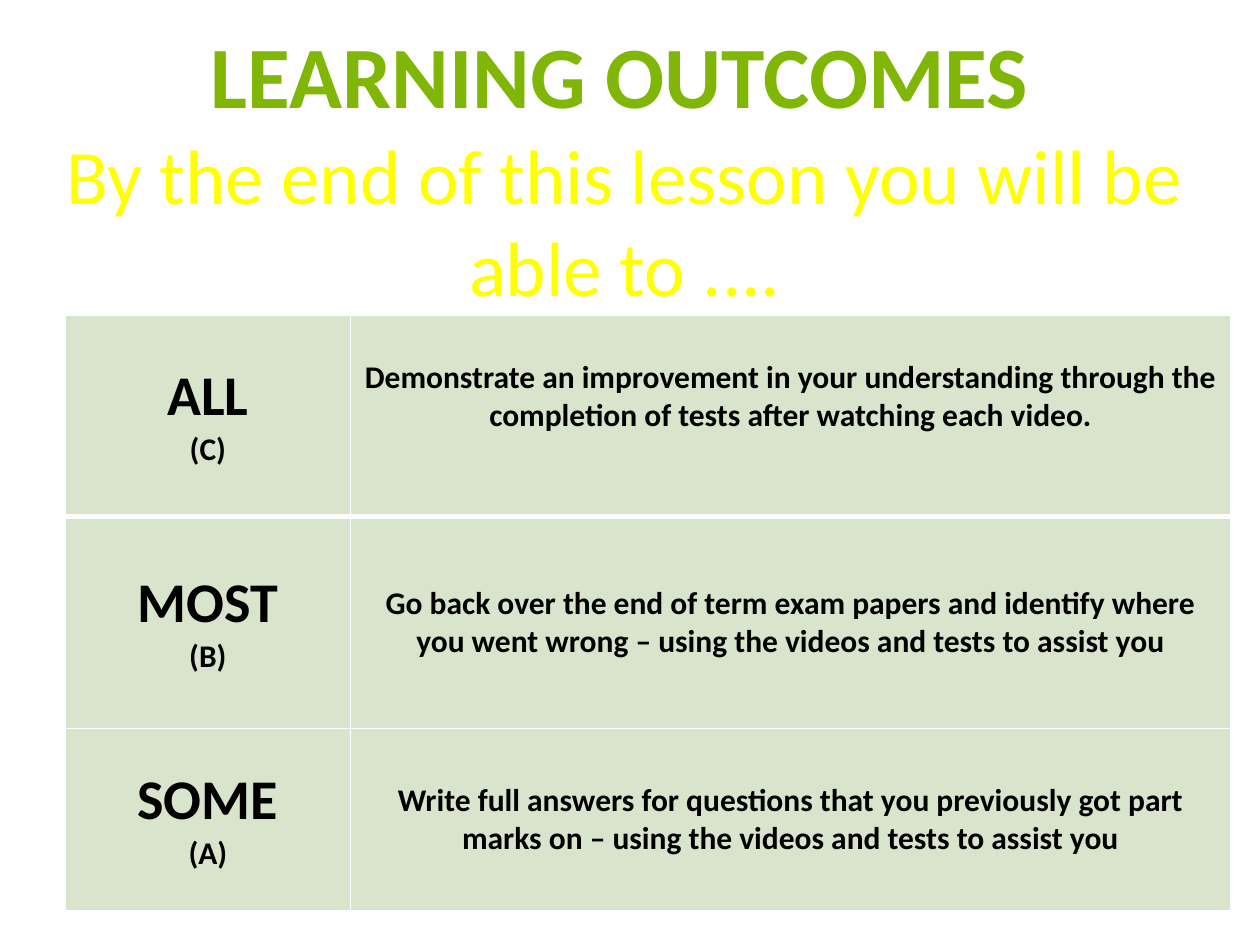
import dataclasses

import pptx
import pptx.dml.color
import pptx.enum.text
import pptx.oxml
import pptx.oxml.ns
import pptx.util

Inches = pptx.util.Inches
Pt = pptx.util.Pt

COLOURS = {
    "heading": "80B606",
    "intro": "FFFF00",
    "text": "000000",
    "cell": "D8E5CC",
    "border": "FFFFFF",
}
FONT = "Calibri"
COLUMN_WIDTHS = (2.26, 6.99)


@dataclasses.dataclass
class Outcome:
    group: str
    grade: str
    task: str
    height: float
    bottom_border: float = 1
    bottom_margin: float = 0.05


OUTCOMES = [
    Outcome("ALL", "(C)", "Demonstrate an improvement in your understanding through "
            "the completion of tests after watching each video.", 1.6, 3, 0.35),
    Outcome("MOST", "(B)", "Go back over the end of term exam papers and identify where "
            "you went wrong – using the videos and tests to assist you", 1.68),
    Outcome("SOME", "(A)", "Write full answers for questions that you previously got part "
            "marks on – using the videos and tests to assist you", 1.45),
]


def rgb(name: str) -> pptx.dml.color.RGBColor:
    return pptx.dml.color.RGBColor.from_string(COLOURS[name])


def write_line(paragraph, text: str, size: float, colour: str, bold: bool) -> None:
    paragraph.alignment = pptx.enum.text.PP_ALIGN.CENTER
    paragraph.space_before = Pt(0)
    run = paragraph.add_run()
    run.text = text
    for attribute, value in {"name": FONT, "size": Pt(size), "bold": bold}.items():
        setattr(run.font, attribute, value)
    run.font.color.rgb = rgb(colour)


def fill_placeholder(placeholder, box: tuple, text: str, size: float,
                     colour: str, bold: bool) -> None:
    for side, length in zip(("left", "top", "width", "height"), box):
        setattr(placeholder, side, Inches(length))
    frame = placeholder.text_frame
    frame_format = {
        "word_wrap": True,
        "auto_size": pptx.enum.text.MSO_AUTO_SIZE.NONE,
        "vertical_anchor": pptx.enum.text.MSO_ANCHOR.TOP,
    }
    for attribute, value in frame_format.items():
        setattr(frame, attribute, value)
    write_line(frame.paragraphs[0], text, size, colour, bold)


def add_border(cell, side: str, width: float) -> None:
    """Append one cell edge; edges must come before the cell's fill."""
    edge = pptx.oxml.parse_xml(
        f'<a:{side} {pptx.oxml.ns.nsdecls("a")} w="{Pt(width)}"><a:solidFill>'
        f'<a:srgbClr val="{COLOURS["border"]}"/></a:solidFill></a:{side}>')
    cell._tc.get_or_add_tcPr().append(edge)


def fill_cell(cell, lines: list[tuple[str, float]], top_border: float,
              bottom_border: float) -> None:
    for side, width in {"lnL": 1, "lnR": 1, "lnT": top_border, "lnB": bottom_border}.items():
        add_border(cell, side, width)
    cell.fill.solid()
    cell.fill.fore_color.rgb = rgb("cell")
    cell.vertical_anchor = pptx.enum.text.MSO_ANCHOR.MIDDLE
    frame = cell.text_frame
    for index, (text, size) in enumerate(lines):
        paragraph = frame.add_paragraph() if index else frame.paragraphs[0]
        write_line(paragraph, text, size, "text", True)


def add_outcomes(slide, left: float, top: float) -> None:
    table = slide.shapes.add_table(
        len(OUTCOMES), len(COLUMN_WIDTHS), Inches(left), Inches(top),
        Inches(sum(COLUMN_WIDTHS)),
        Inches(sum(outcome.height for outcome in OUTCOMES))).table
    table.first_row = table.horz_banding = False
    for column, width in zip(table.columns, COLUMN_WIDTHS):
        column.width = Inches(width)
    top_border = 1
    for index, outcome in enumerate(OUTCOMES):
        table.rows[index].height = Inches(outcome.height)
        group_cell, task_cell = table.rows[index].cells
        borders = (top_border, outcome.bottom_border)
        fill_cell(group_cell, [(outcome.group, 32), (outcome.grade, 18)], *borders)
        fill_cell(task_cell, [(outcome.task, 18)], *borders)
        task_cell.margin_bottom = Inches(outcome.bottom_margin)
        top_border = outcome.bottom_border


def main() -> None:
    presentation = pptx.Presentation()
    presentation.slide_width = Inches(10)
    presentation.slide_height = Inches(7.5)
    slide = presentation.slides.add_slide(presentation.slide_layouts[0])
    heading, intro = slide.placeholders
    fill_placeholder(heading, (0.77, 0.12, 8.3, 0.94), "LEARNING OUTCOMES",
                     50, "heading", True)
    fill_placeholder(intro, (0.07, 0.96, 9.78, 1.58),
                     "By the end of this lesson you will be able to ....",
                     44, "intro", False)
    add_outcomes(slide, 0.52, 2.5)
    presentation.save("out.pptx")


if __name__ == "__main__":
    main()
